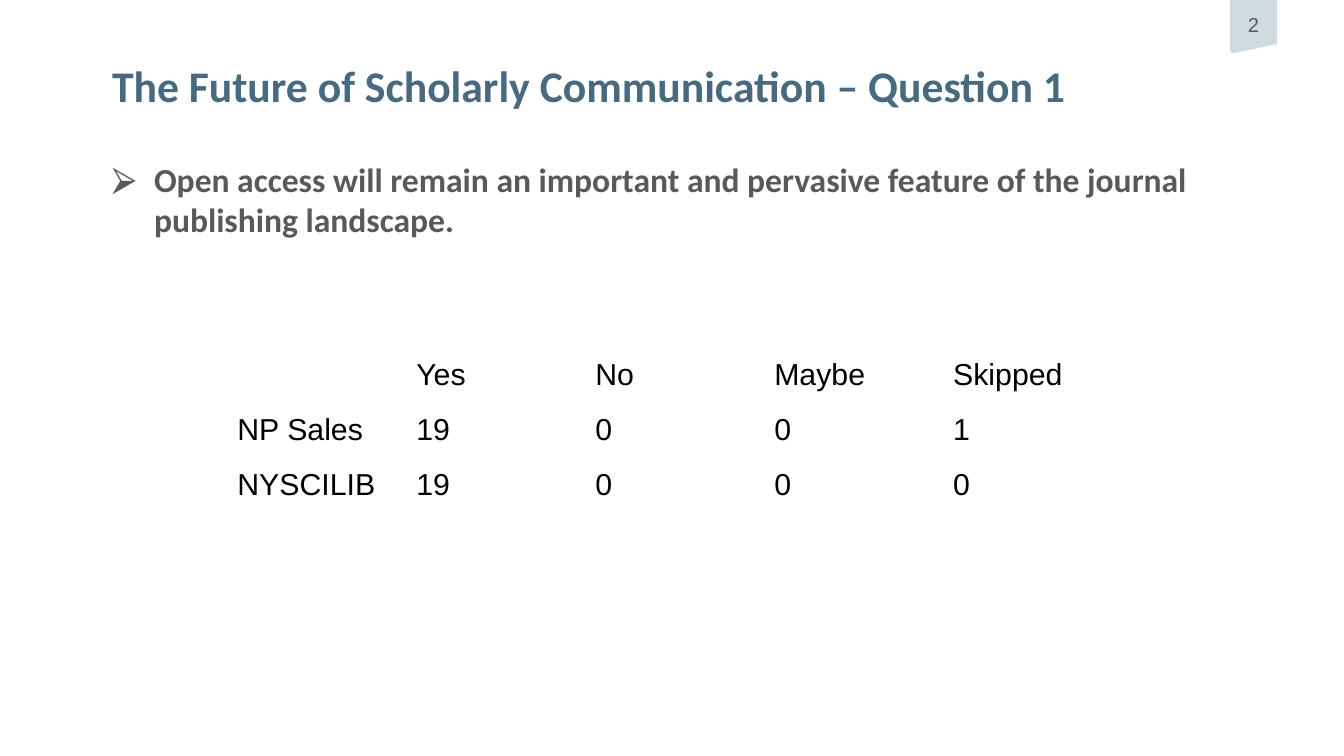
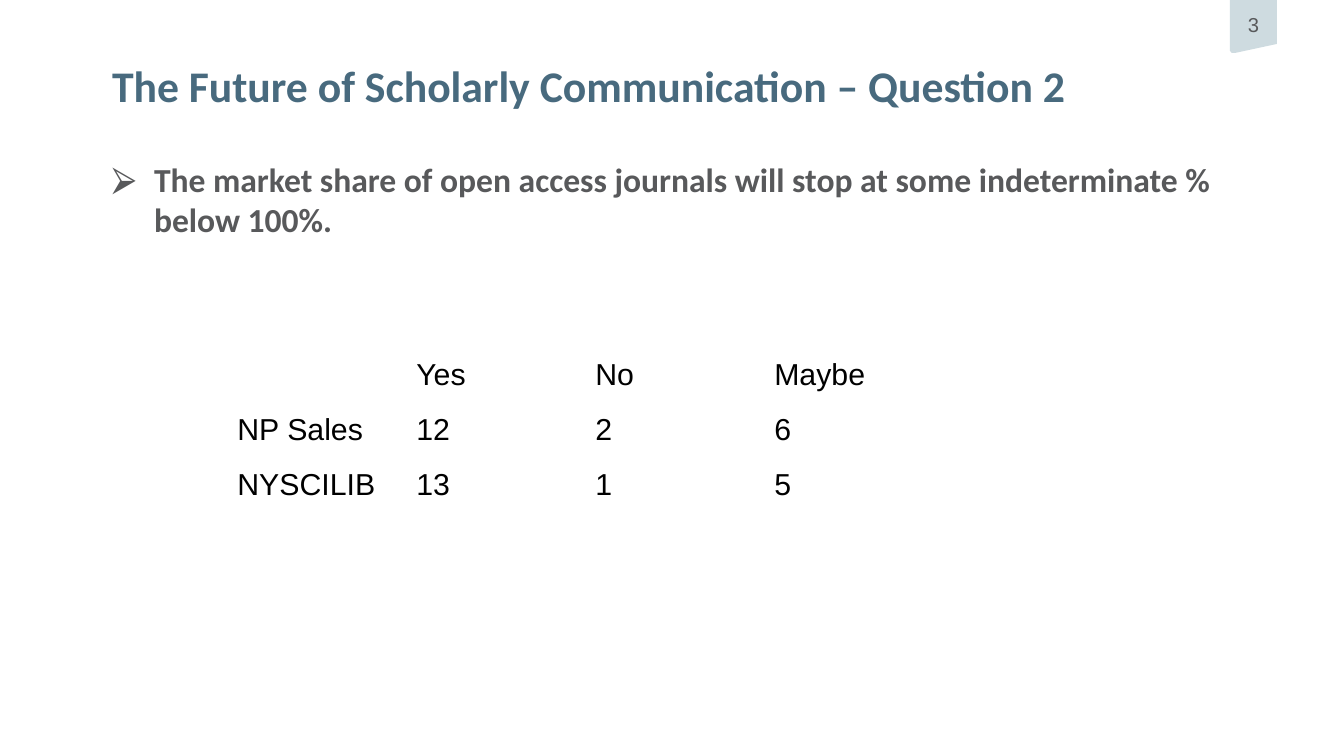
import pptx
import pptx.util
import pptx.dml.color
import pptx.enum.text
import pptx.oxml
import pptx.oxml.ns

# Content: one entry per question slide
QUESTIONS = [
    {
        "page": 2,
        "title": "The Future of Scholarly Communication – Question 1",
        "statement": "Open access will remain an important and pervasive feature "
                     "of the journal publishing landscape.",
        "votes": [
            ["", "Yes", "No", "Maybe", "Skipped"],
            ["NP Sales", "19", "0", "0", "1"],
            ["NYSCILIB", "19", "0", "0", "0"],
        ],
    },
    {
        "page": 3,
        "title": "The Future of Scholarly Communication – Question 2",
        "statement": "The market share of open access journals will stop at some "
                     "indeterminate % below 100%.",
        "votes": [
            ["", "Yes", "No", "Maybe"],
            ["NP Sales", "12", "2", "6"],
            ["NYSCILIB", "13", "1", "5"],
        ],
    },
]

# Shared style, lengths in px
EMU_PER_PX = 914400 / 134.4
SLIDE_SIZE = (1344, 756)
TITLE_BOX = (112, 59, 1118, 41)
STATEMENT_BOX = (112, 159, 1118, 82)
TABLE_CORNER = (224, 352)
COLUMN_WIDTH, ROW_HEIGHT = 179, 55
BULLET_INDENT = 42
PAGE_TAB = [(1230, 0), (1277, 0), (1277, 44), (1235, 53), (1232, 53), (1230, 51)]

TITLE_BLUE, TAB_BLUE, GREY, BLACK = "486A7E", "CEDBE0", "58595B", "000000"
HEADING_FONT, PLAIN_FONT = "Calibri", "Arial"


def px(length):
    return pptx.util.Emu(round(length * EMU_PER_PX))


def color(value):
    return pptx.dml.color.RGBColor.from_string(value)


def place(shape, box):
    shape.left, shape.top, shape.width, shape.height = map(px, box)


def set_font(paragraph, name, size, value, bold=False):
    font = paragraph.font
    font.name, font.size, font.bold = name, pptx.util.Pt(size), bold
    font.color.rgb = color(value)


def prepare_frame(frame, bottom=0):
    frame.margin_left = frame.margin_top = frame.margin_right = 0
    frame.margin_bottom = px(bottom)
    frame.word_wrap = True
    frame.auto_size = pptx.enum.text.MSO_AUTO_SIZE.NONE
    frame.vertical_anchor = pptx.enum.text.MSO_ANCHOR.TOP


def add_bullet(paragraph):
    properties = paragraph._p.get_or_add_pPr()
    properties.set("marL", str(px(BULLET_INDENT)))
    properties.set("indent", str(-px(BULLET_INDENT)))
    namespace = pptx.oxml.ns.nsdecls("a")
    for element in (
        f'<a:buClr {namespace}><a:srgbClr val="{GREY}"/></a:buClr>',
        f'<a:buFont {namespace} typeface="{PLAIN_FONT}"/>',
        f'<a:buChar {namespace} char="⮚"/>',
    ):
        properties.append(pptx.oxml.parse_xml(element))


def add_page_tab(slide, page):
    builder = slide.shapes.build_freeform(*PAGE_TAB[0], scale=EMU_PER_PX)
    builder.add_line_segments(PAGE_TAB[1:], close=True)
    tab = builder.convert_to_shape()
    tab.shadow.inherit = False
    tab.fill.solid()
    tab.fill.fore_color.rgb = color(TAB_BLUE)
    tab.line.fill.background()
    prepare_frame(tab.text_frame, bottom=5)
    tab.text_frame.vertical_anchor = pptx.enum.text.MSO_ANCHOR.MIDDLE
    paragraph = tab.text_frame.paragraphs[0]
    paragraph.text = str(page)
    paragraph.alignment = pptx.enum.text.PP_ALIGN.CENTER
    set_font(paragraph, PLAIN_FONT, 10.8, GREY)


def set_title(slide, text):
    title = slide.shapes.title
    place(title, TITLE_BOX)
    prepare_frame(title.text_frame)
    paragraph = title.text_frame.paragraphs[0]
    paragraph.text = text
    paragraph.alignment = pptx.enum.text.PP_ALIGN.LEFT
    set_font(paragraph, HEADING_FONT, 23.4, TITLE_BLUE, bold=True)


def add_statement(slide, text):
    box = slide.shapes.add_textbox(*map(px, STATEMENT_BOX))
    prepare_frame(box.text_frame)
    paragraph = box.text_frame.paragraphs[0]
    paragraph.text = text
    add_bullet(paragraph)
    set_font(paragraph, HEADING_FONT, 18, GREY, bold=True)


def add_votes(slide, votes):
    row_count, column_count = len(votes), len(votes[0])
    size = (COLUMN_WIDTH * column_count, ROW_HEIGHT * row_count)
    table = slide.shapes.add_table(
        row_count, column_count, *map(px, TABLE_CORNER + size)).table
    table.first_row = table.horz_banding = False
    for row, values in enumerate(votes):
        for column, value in enumerate(values):
            cell = table.cell(row, column)
            cell.fill.background()
            paragraph = cell.text_frame.paragraphs[0]
            paragraph.text = value
            set_font(paragraph, PLAIN_FONT, 16.2, BLACK)


def main():
    presentation = pptx.Presentation()
    presentation.slide_width, presentation.slide_height = map(px, SLIDE_SIZE)
    title_only = presentation.slide_layouts[5]
    for question in QUESTIONS:
        slide = presentation.slides.add_slide(title_only)
        add_page_tab(slide, question["page"])
        set_title(slide, question["title"])
        add_statement(slide, question["statement"])
        add_votes(slide, question["votes"])
    presentation.save("out.pptx")


if __name__ == "__main__":
    main()
